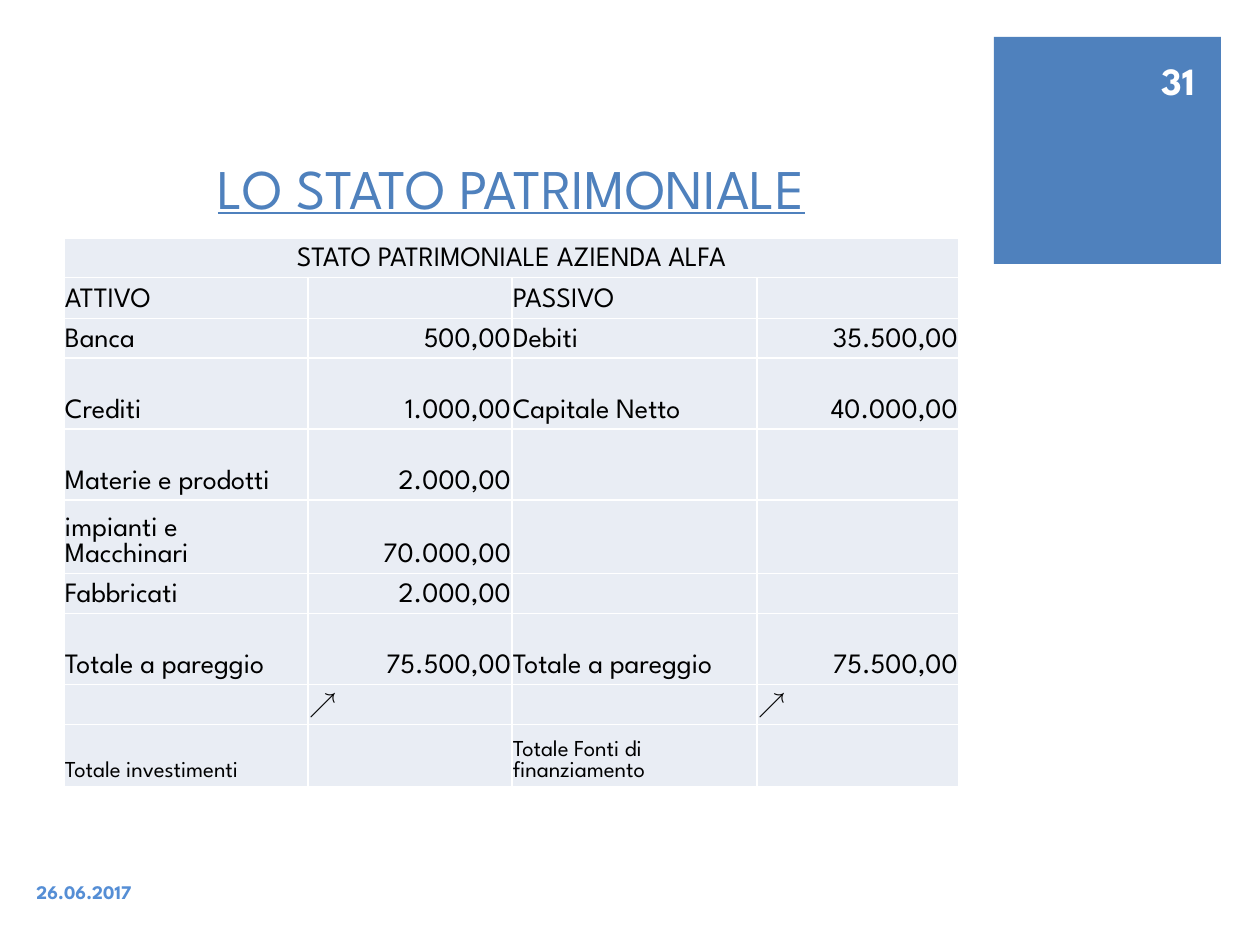
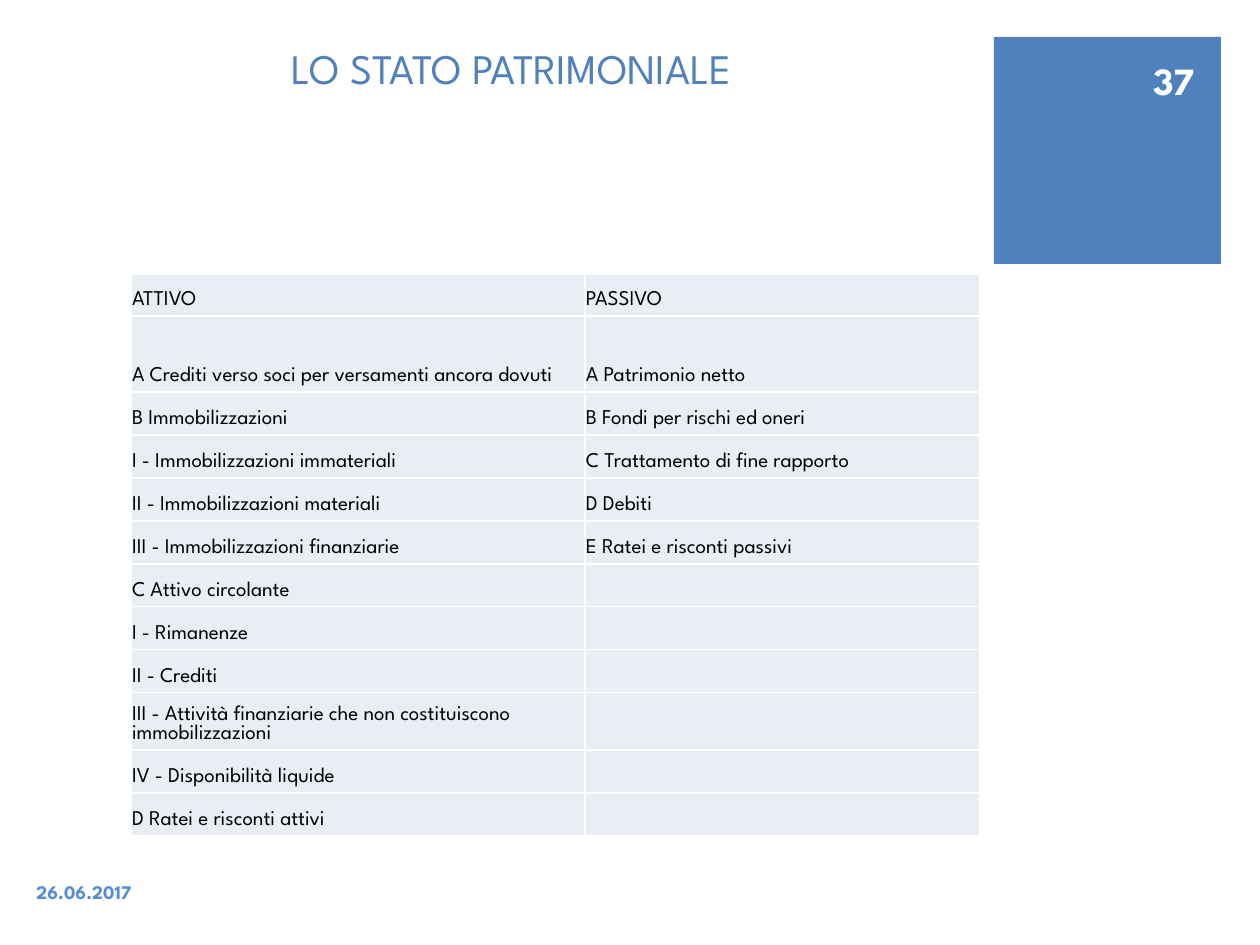
from pptx import Presentation
from pptx import util as u
from pptx.dml.color import RGBColor
from pptx.enum import shapes, text

PX = 914400 // 126
FONT = "League Spartan"
BLUE = RGBColor(0x4F, 0x81, 0xBD)
SKY = RGBColor(0x55, 0x8E, 0xD5)
PALE = RGBColor(0xE9, 0xED, 0xF4)
WHITE = RGBColor(255, 255, 255)
BLACK = RGBColor(0, 0, 0)
LEFT, MID, RIGHT = text.PP_ALIGN.LEFT, text.PP_ALIGN.CENTER, text.PP_ALIGN.RIGHT


def style(par, words, size, color, align=LEFT, **extra):
    par.alignment = align
    run = par.add_run()
    run.text = words
    run.font.color.rgb = color
    for key, val in dict(name=FONT, size=u.Pt(size), **extra).items():
        setattr(run.font, key, val)


def label(slide, box, *args, **extra):
    frame = slide.shapes.add_textbox(*[n * PX for n in box]).text_frame
    frame.word_wrap = True
    frame.vertical_anchor = text.MSO_ANCHOR.MIDDLE
    style(frame.paragraphs[0], *args, **extra)


balance = [
    ["STATO PATRIMONIALE AZIENDA ALFA", "", "", ""],
    ["ATTIVO", "", "PASSIVO", ""],
    ["Banca", "500,00", "Debiti", "35.500,00"],
    ["Crediti", "1.000,00", "Capitale Netto", "40.000,00"],
    ["Materie e prodotti", "2.000,00", "", ""],
    ["impianti e Macchinari", "70.000,00", "", ""],
    ["Fabbricati", "2.000,00", "", ""],
    ["Totale a pareggio", "75.500,00", "Totale a pareggio", "75.500,00"],
    ["", "↗", "", "↗"],
    ["Totale investimenti", "", "Totale Fonti di finanziamento", ""],
]
scheme = [
    ["ATTIVO", "PASSIVO"],
    ["A Crediti verso soci per versamenti ancora dovuti", "A Patrimonio netto"],
    ["B Immobilizzazioni", "B Fondi per rischi ed oneri"],
    ["I - Immobilizzazioni immateriali", "C Trattamento di fine rapporto"],
    ["II - Immobilizzazioni materiali", "D Debiti"],
    ["III - Immobilizzazioni finanziarie", "E Ratei e risconti passivi"],
    ["C Attivo circolante", ""],
    ["I - Rimanenze", ""],
    ["II - Crediti", ""],
    ["III - Attività finanziarie che non costituiscono immobilizzazioni", ""],
    ["IV - Disponibilità liquide", ""],
    ["D Ratei e risconti attivi", ""],
]
pages = [
    dict(num="31", top=147, size=32, line=True, rows=balance, at=(64, 238),
         cols=[244, 204, 245, 202], body=16, last=13, foot=5,
         tall=[37, 41, 38, 71, 71, 71, 40, 71, 40, 63]),
    dict(num="37", top=28, size=24, line=False, rows=scheme, at=(131, 274),
         cols=[454, 395], body=12, last=12, foot=6,
         tall=[42, 76] + [43] * 7 + [46, 43, 43]),
]

prs = Presentation()
prs.slide_width, prs.slide_height = u.Inches(10), u.Inches(7.5)

for page in pages:
    slide = prs.slides.add_slide(prs.slide_layouts[6])
    block = slide.shapes.add_shape(shapes.MSO_SHAPE.RECTANGLE,
                                   *[n * PX for n in (994, 37, 227, 227)])
    block.shadow.inherit = False
    block.fill.solid()
    block.fill.fore_color.rgb = BLUE
    block.line.fill.background()

    label(slide, (63, page["top"], 897, 80), "LO STATO PATRIMONIALE",
          page["size"], BLUE, MID, underline=page["line"])
    label(slide, (1138, 55, 69, 50), page["num"], 22, WHITE, RIGHT, bold=True)
    label(slide, (24, 872, 828, 40), "26.06.2017", 11, SKY, bold=True)

    rows, cols, tall = page["rows"], page["cols"], page["tall"]
    size = sum(cols), sum(tall)
    grid = slide.shapes.add_table(len(rows), len(cols),
                                  *[n * PX for n in page["at"] + size]).table
    grid.first_row = grid.horz_banding = False
    for col, wide in zip(grid.columns, cols):
        col.width = wide * PX
    for r, row in enumerate(rows):
        grid.rows[r].height = tall[r] * PX
        points = page["last"] if r == len(rows) - 1 else page["body"]
        for c, words in enumerate(row):
            cell = grid.cell(r, c)
            cell.fill.solid()
            cell.fill.fore_color.rgb = PALE
            cell.vertical_anchor = text.MSO_ANCHOR.BOTTOM
            cell.margin_left = cell.margin_right = cell.margin_top = PX
            cell.margin_bottom = page["foot"] * PX
            par = cell.text_frame.paragraphs[0]
            if words:
                align = RIGHT if words.endswith(",00") else LEFT
                style(par, words, points, BLACK, align)
            else:
                par._p.get_or_add_endParaRPr().set("sz", str(points * 100))
    if rows is balance:
        grid.cell(0, 0).merge(grid.cell(0, 3))
        grid.cell(0, 0).text_frame.paragraphs[0].alignment = MID

prs.save("out.pptx")
